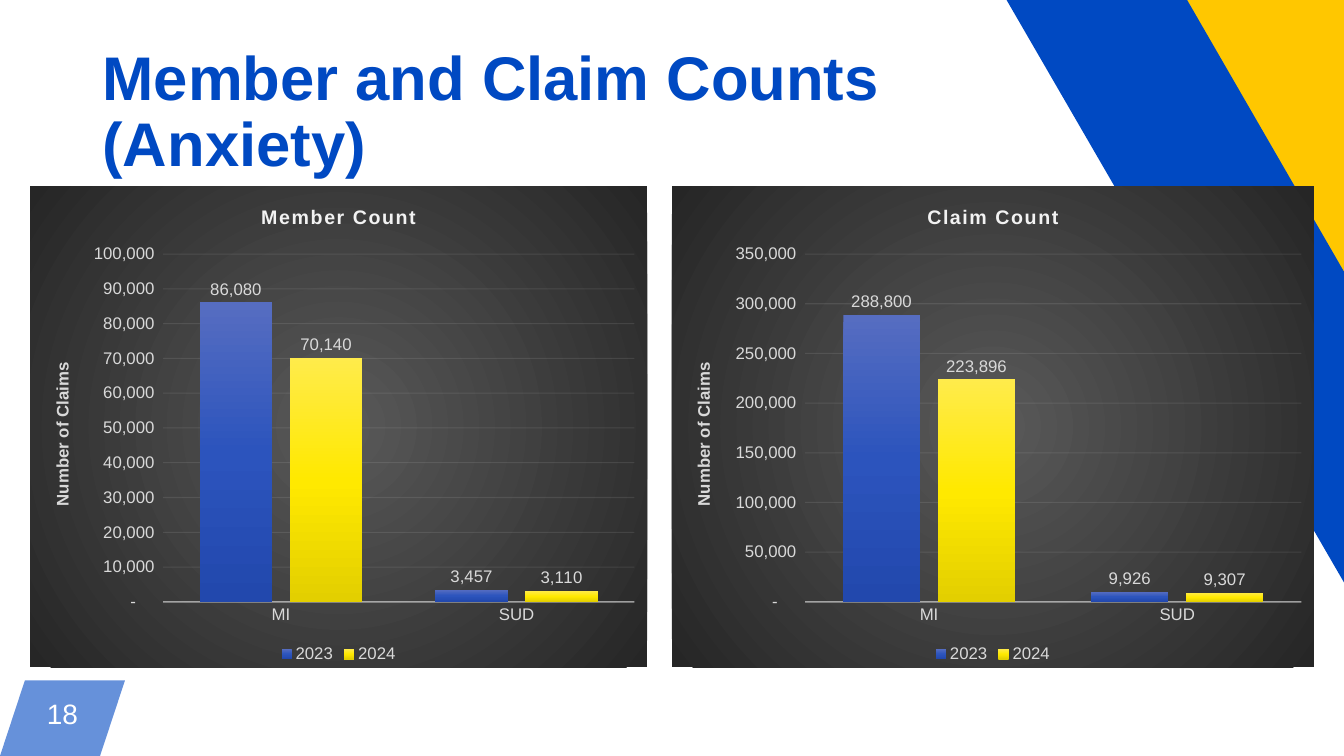
"""Build the slide comparing anxiety member and claim counts for 2023 and 2024."""
from dataclasses import dataclass

from pptx import Presentation
from pptx.chart.data import CategoryChartData
from pptx.dml.color import RGBColor
from pptx.enum.chart import XL_CHART_TYPE as ChartType, XL_LABEL_POSITION as LabelPos
from pptx.enum.chart import XL_LEGEND_POSITION as LegendPos, XL_TICK_MARK as Tick
from pptx.enum.shapes import MSO_SHAPE as Preset
from pptx.enum.text import MSO_ANCHOR as Anchor, MSO_AUTO_SIZE as AutoSize, PP_ALIGN as Align
from pptx.oxml import parse_xml
from pptx.oxml.ns import nsdecls, qn
from pptx.util import Pt


@dataclass(frozen=True)
class Theme:
    font: str = "Arial"
    blue: str = "0049C2"
    gold: str = "FFC700"
    white: str = "FFFFFF"
    pale: str = "F2F2F2"
    label: str = "D9D9D9"
    panel: tuple = ("595959", "262626")
    bars: tuple = (("566DC1", "2C54BD", "2248AD"), ("FFEB4B", "FFE900", "E3CF00"))
    heading: int = 44
    number: int = 20
    chart_title: int = 14
    chart_text: int = 12


theme = Theme()


def write(frame, text, size, color, bold=False, align=None, line=None, tracking=None):
    """Put text in a frame with one format."""
    frame.text = text
    paragraph = frame.paragraphs[0]
    if align is not None:
        paragraph.alignment = align
    if line is not None:
        paragraph.line_spacing = line
    for run in paragraph.runs:
        run.font.name, run.font.size, run.font.bold = theme.font, Pt(size), bold
        run.font.color.rgb = RGBColor.from_string(color)
        if tracking is not None:
            run.font._element.set("spc", str(tracking * 100))


def gradient(colors, direction):
    """Return a gradient fill with evenly spaced stops."""
    step = 100000 // (len(colors) - 1)
    stops = "".join(f'<a:gs pos="{i * step}"><a:srgbClr val="{color}"/></a:gs>'
                    for i, color in enumerate(colors))
    return parse_xml(f'<a:gradFill {nsdecls("a")} rotWithShape="1">'
                     f'<a:gsLst>{stops}</a:gsLst>{direction}</a:gradFill>')


deck = Presentation()
deck.slide_width, deck.slide_height = Pt(960), Pt(540)
slide = deck.slides.add_slide(deck.slide_layouts[5])
shapes = slide.shapes

bands = [
    (theme.gold, [(843, 0), (960, 0), (960, 202.5)]),
    (theme.blue, [(719.2, 0), (848, 0), (960, 194.5), (960, 416.5)]),
]
for color, corners in bands:
    outline = shapes.build_freeform(*corners[0], scale=Pt(1))
    outline.add_line_segments(corners[1:], close=True)
    band = outline.convert_to_shape()
    band.shadow.inherit = False
    band.fill.solid()
    band.fill.fore_color.rgb = RGBColor.from_string(color)
    band.line.fill.background()

page = shapes.add_shape(Preset.PARALLELOGRAM, Pt(0), Pt(486), Pt(89.3), Pt(54))
page.adjustments[0] = 0.33
page.shadow.inherit = False
page.fill.solid()
page.fill.fore_color.rgb = RGBColor.from_string(theme.blue)
page.line.fill.background()
page_frame = page.text_frame
page_frame.margin_left = page_frame.margin_right = Pt(3)
page_frame.margin_top = page_frame.margin_bottom = Pt(3)
page_frame.vertical_anchor = Anchor.MIDDLE
write(page_frame, "18", theme.number, theme.white, align=Align.CENTER, line=Pt(17.7))
translucent = [(page.element, "./p:spPr/a:solidFill/a:srgbClr", 60)]

heading = shapes.title
heading.left, heading.top, heading.width, heading.height = Pt(66), Pt(28.8), Pt(828), Pt(104.4)
heading.text_frame.auto_size = AutoSize.NONE
heading.text_frame.vertical_anchor = Anchor.MIDDLE
write(heading.text_frame, "Member and Claim Counts \v(Anxiety)", theme.heading, theme.blue,
      bold=True, align=Align.LEFT, line=0.9)

years = ("2023", "2024")
number_format = r'_(* #,##0_);_(* \(#,##0\);_(* "-"??_);_('
panel_height = 343.5
counts = [
    ("Member Count", 21.6, 440.6, 100000, 10000, ((86080, 3457), (70140, 3110))),
    ("Claim Count", 480, 458.6, 350000, 50000, ((288800, 9926), (223896, 9307))),
]
for name, left, width, top_value, step, values in counts:
    data = CategoryChartData()
    data.categories = ["MI", "SUD"]
    for year, year_values in zip(years, values):
        data.add_series(year, year_values)
    chart = shapes.add_chart(ChartType.COLUMN_CLUSTERED, Pt(left), Pt(133), Pt(width),
                             Pt(panel_height), data).chart
    chart.font.name, chart.font.size = theme.font, Pt(theme.chart_text)
    chart.font.color.rgb = RGBColor.from_string(theme.label)
    write(chart.chart_title.text_frame, name, theme.chart_title, theme.pale,
          bold=True, tracking=1)
    chart.has_legend = True
    chart.legend.position = LegendPos.BOTTOM
    chart.legend.include_in_layout = False

    space = chart._chartSpace
    panel = parse_xml(f'<c:spPr {nsdecls("c", "a")}><a:ln><a:noFill/></a:ln></c:spPr>')
    panel.insert(0, gradient(theme.panel, '<a:path path="circle"><a:fillToRect l="50000" '
                             't="50000" r="50000" b="50000"/></a:path>'))
    space.find(qn("c:chart")).addnext(panel)

    plot = chart.plots[0]
    plot.gap_width, plot.overlap, plot.vary_by_categories = 100, -24, False
    plot.has_data_labels = True
    labels = plot.data_labels
    labels.show_value, labels.position = True, LabelPos.OUTSIDE_END
    labels.number_format, labels.number_format_is_linked = number_format, False
    labels.font.name, labels.font.size = theme.font, Pt(theme.chart_text)
    labels.font.color.rgb = RGBColor.from_string(theme.label)
    for series, colors in zip(plot.series, theme.bars):
        series.format.line.fill.background()
        series._element.get_or_add_spPr().insert(
            0, gradient(colors, '<a:lin ang="5400000" scaled="0"/>'))

    groups, amounts = chart.category_axis, chart.value_axis
    for axis in (groups, amounts):
        axis.major_tick_mark = axis.minor_tick_mark = Tick.NONE
    amounts.minimum_scale, amounts.maximum_scale, amounts.major_unit = 0, top_value, step
    amounts.tick_labels.number_format = number_format
    amounts.tick_labels.number_format_is_linked = False
    amounts.format.line.fill.background()
    axis_title = amounts.axis_title.text_frame
    write(axis_title, "Number of Claims", theme.chart_text, theme.label, bold=True)
    axis_title._txBody.bodyPr.set("rot", "-5400000")
    axis_title._txBody.bodyPr.set("vert", "horz")
    for line, weight in ((groups.format.line, 1), (amounts.major_gridlines.format.line, 0.75)):
        line.width = Pt(weight)
        line.color.rgb = RGBColor.from_string(theme.pale)
    translucent += [(space, ".//c:catAx/c:spPr//a:srgbClr", 54),
                    (space, ".//c:majorGridlines//a:srgbClr", 10)]

    area = space.find(".//" + qn("c:plotArea"))
    for old in area.findall(qn("c:layout")):
        area.remove(old)
    box = {"x": 95 / width, "y": 48.5 / panel_height,
           "w": (width - 104) / width, "h": 248.5 / panel_height}
    modes = "".join(f'<c:{side}Mode val="edge"/>' for side in "xy")
    sizes = "".join(f'<c:{side} val="{share:.4f}"/>' for side, share in box.items())
    area.insert(0, parse_xml(f'<c:layout {nsdecls("c")}><c:manualLayout><c:layoutTarget '
                             f'val="inner"/>{modes}{sizes}</c:manualLayout></c:layout>'))

for root, query, opacity in translucent:
    for color in root.xpath(query):
        color.append(parse_xml(f'<a:alpha {nsdecls("a")} val="{opacity * 1000}"/>'))

deck.save("out.pptx")
